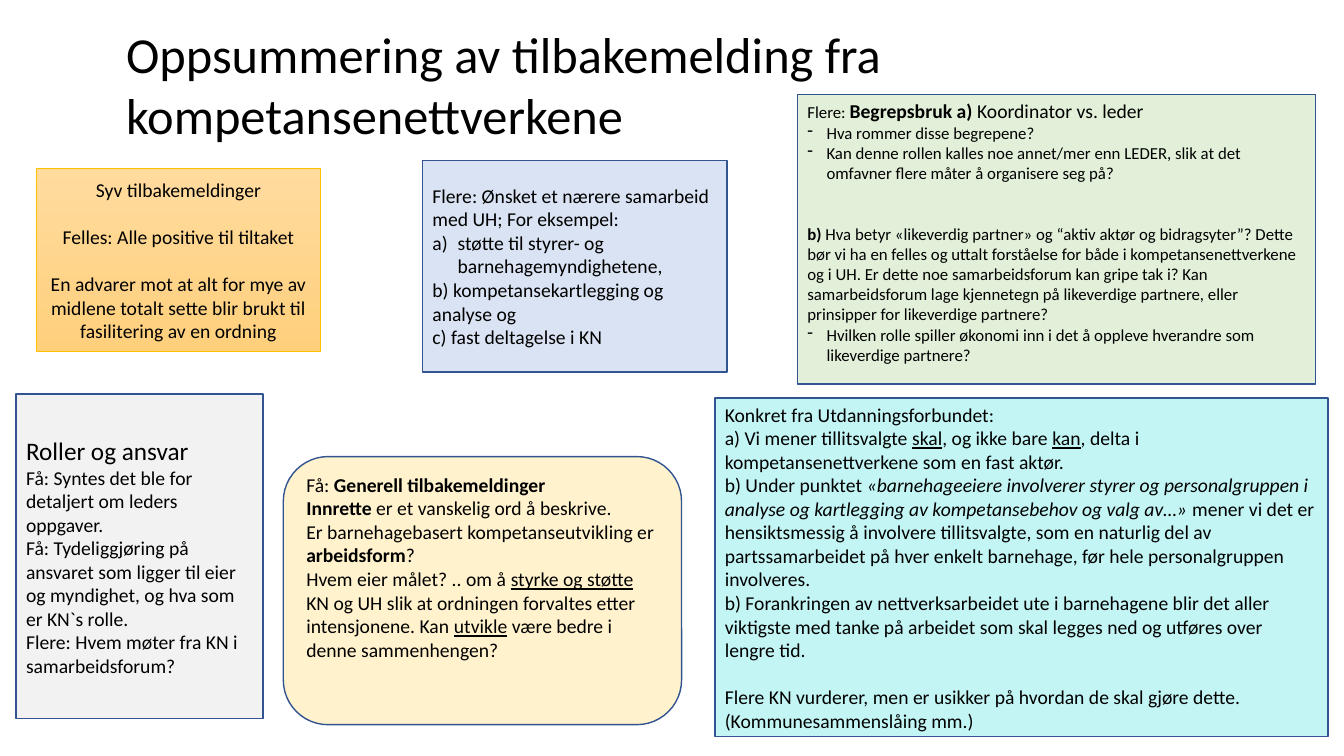
from dataclasses import dataclass

from lxml import etree
from pptx import Presentation
from pptx import util as u
from pptx.dml.color import RGBColor
from pptx.enum import shapes, text
from pptx.oxml import ns

FONT = "Calibri"
BLACK = "000000"
BLUE = "325491"
LEFT, CENTER = text.PP_ALIGN.LEFT, text.PP_ALIGN.CENTER


@dataclass
class Para:
    """Runs are plain strings or (text, flags), flags being any of b, i, u."""
    runs: list
    size: float = 14
    before: float = 0
    bullet: str = ""


def color(value):
    return RGBColor.from_string(value)


def set_font(font, size):
    font.name = FONT
    font.size = u.Pt(size)
    font.color.rgb = color(BLACK)


def add_bullet(paragraph, bullet):
    """Hang a dash, or a number of the form a), in front of the paragraph."""
    lettered = bullet == "a)"
    indent = u.Inches(0.25 if lettered else 0.19)
    props = paragraph._p.get_or_add_pPr()
    props.set("marL", str(indent))
    props.set("indent", str(-indent))
    if lettered:
        etree.SubElement(props, ns.qn("a:buAutoNum"), type="alphaLcParenR")
    else:
        etree.SubElement(props, ns.qn("a:buFontTx"))
        etree.SubElement(props, ns.qn("a:buChar"), char=bullet)


def write(frame, paras, align):
    for index, para in enumerate(paras):
        paragraph = frame.paragraphs[0] if index == 0 else frame.add_paragraph()
        paragraph.alignment = align
        if para.before:
            paragraph.space_before = u.Pt(para.before)
        if para.bullet:
            add_bullet(paragraph, para.bullet)
        set_font(paragraph.font, para.size)
        for run in para.runs:
            words, flags, *size = (run, "") if isinstance(run, str) else run
            span = paragraph.add_run()
            span.text = words
            set_font(span.font, size[0] if size else para.size)
            if "b" in flags:
                span.font.bold = True
            if "i" in flags:
                span.font.italic = True
            if "u" in flags:
                span.font.underline = True


def add_title(page, box, words):
    title = page.shapes.title
    title.left, title.top, title.width, title.height = map(u.Inches, box)
    frame = title.text_frame
    frame.word_wrap = True
    frame.auto_size = text.MSO_AUTO_SIZE.NONE
    frame.vertical_anchor = text.MSO_ANCHOR.BOTTOM
    write(frame, [Para([words], 36)], LEFT)


def add_note(page, box, fill, paras, line=BLUE, weight=1, align=LEFT,
             kind=shapes.MSO_SHAPE.RECTANGLE, bottom=0.05):
    """Draw a filled note; a pair of fill colours gives a vertical gradient."""
    note = page.shapes.add_shape(kind, *map(u.Inches, box))
    note.shadow.inherit = False
    if isinstance(fill, tuple):
        note.fill.gradient()
        note.fill.gradient_angle = 270
        for stop, value in zip(note.fill.gradient_stops, fill):
            stop.color.rgb = color(value)
    else:
        note.fill.solid()
        note.fill.fore_color.rgb = color(fill)
    note.line.color.rgb = color(line)
    note.line.width = u.Pt(weight)
    frame = note.text_frame
    frame.word_wrap = True
    frame.margin_bottom = u.Inches(bottom)
    frame.vertical_anchor = text.MSO_ANCHOR.MIDDLE
    write(frame, paras, align)


SUMMARY = [
    Para(["Syv tilbakemeldinger"]),
    Para(["Felles: Alle positive til tiltaket"], before=17),
    Para(["En advarer mot at alt for mye av midlene totalt sette blir brukt til "
          "fasilitering av en ordning"], before=17),
]
COOPERATION = [
    Para(["Flere: Ønsket et nærere samarbeid med UH; For eksempel:"]),
    Para(["støtte til styrer- og barnehagemyndighetene,"], bullet="a)"),
    Para(["b) kompetansekartlegging og analyse og"]),
    Para(["c) fast deltagelse i KN"]),
]
TERMS = [
    Para(["Flere: ", ("Begrepsbruk a)", "b", 14),
          (" Koordinator vs. leder", "", 14)], 12),
    Para(["Hva rommer disse begrepene?"], 12, bullet="-"),
    Para(["Kan denne rollen kalles noe annet/mer enn LEDER, slik at det omfavner "
          "flere måter å organisere seg på?"], 12, bullet="-"),
    Para([("b) ", "b"),
          "Hva betyr «likeverdig partner» og “aktiv aktør og bidragsyter”? Dette "
          "bør vi ha en felles og uttalt forståelse for både i "
          "kompetansenettverkene og i UH. Er dette noe samarbeidsforum kan gripe "
          "tak i? Kan samarbeidsforum lage kjennetegn på likeverdige partnere, "
          "eller prinsipper for likeverdige partnere?"], 12, before=29),
    Para(["Hvilken rolle spiller økonomi inn i det å oppleve hverandre som "
          "likeverdige partnere?"], 12, bullet="-"),
]
ROLES = [
    Para(["Roller og ansvar"], 18),
    Para(["Få: Syntes det ble for detaljert om leders oppgaver."]),
    Para(["Få: Tydeliggjøring på ansvaret som ligger til eier og myndighet, og "
          "hva som er KN`s rolle."]),
    Para(["Flere: Hvem møter fra KN i samarbeidsforum?"]),
]
GENERAL = [
    Para(["Få: ", ("Generell tilbakemeldinger", "b")]),
    Para([("Innrette", "b"), " er et vanskelig ord å beskrive."]),
    Para(["Er barnehagebasert kompetanseutvikling er ", ("arbeidsform", "b"), "?"]),
    Para(["Hvem eier målet? .. om å ", ("styrke og støtte ", "u"),
          "KN og UH slik at ordningen forvaltes etter intensjonene. Kan ",
          ("utvikle", "u"), " være bedre i denne sammenhengen?"]),
]
UNION = [
    Para(["Konkret fra Utdanningsforbundet:"]),
    Para(["a) Vi mener tillitsvalgte ", ("skal", "u"), ", og ikke bare ",
          ("kan", "u"), ", delta i kompetansenettverkene som en fast aktør."]),
    Para(["b) Under punktet ",
          ("«barnehageeiere involverer styrer og personalgruppen i analyse og "
           "kartlegging av kompetansebehov og valg av…»", "i"),
          " mener vi det er hensiktsmessig å involvere tillitsvalgte, som en "
          "naturlig del av partssamarbeidet på hver enkelt barnehage, før hele "
          "personalgruppen involveres."]),
    Para(["b) Forankringen av nettverksarbeidet ute i barnehagene blir det aller "
          "viktigste med tanke på arbeidet som skal legges ned og utføres over "
          "lengre tid."]),
    Para(["Flere KN vurderer, men er usikker på hvordan de skal gjøre dette. "
          "(Kommunesammenslåing mm.)"], before=17),
]


def main():
    deck = Presentation()
    deck.slide_width, deck.slide_height = u.Inches(13.33), u.Inches(7.5)
    page = deck.slides.add_slide(deck.slide_layouts.get_by_name("Title Only"))
    add_title(page, (1.15, 0.19, 11.02, 1.29),
              "Oppsummering av tilbakemelding fra kompetansenettverkene")
    add_note(page, (0.36, 1.67, 2.82, 1.82), ("FFDB9E", "FFD07C"), SUMMARY,
             line="FFC000", weight=0.5, align=CENTER)
    add_note(page, (4.19, 1.59, 3.02, 2.1), "DAE3F3", COOPERATION)
    add_note(page, (7.91, 0.94, 5.14, 2.87), "E2F0D9", TERMS, bottom=0.2)
    add_note(page, (0.16, 3.91, 2.45, 3.22), "F2F2F2", ROLES)
    add_note(page, (2.81, 4.53, 3.95, 2.66), "FFF2CC", GENERAL,
             kind=shapes.MSO_SHAPE.ROUNDED_RECTANGLE, bottom=0.52)
    add_note(page, (7.09, 3.95, 6.08, 3.36), "C3F5F5", UNION)
    deck.save("out.pptx")


if __name__ == "__main__":
    main()
